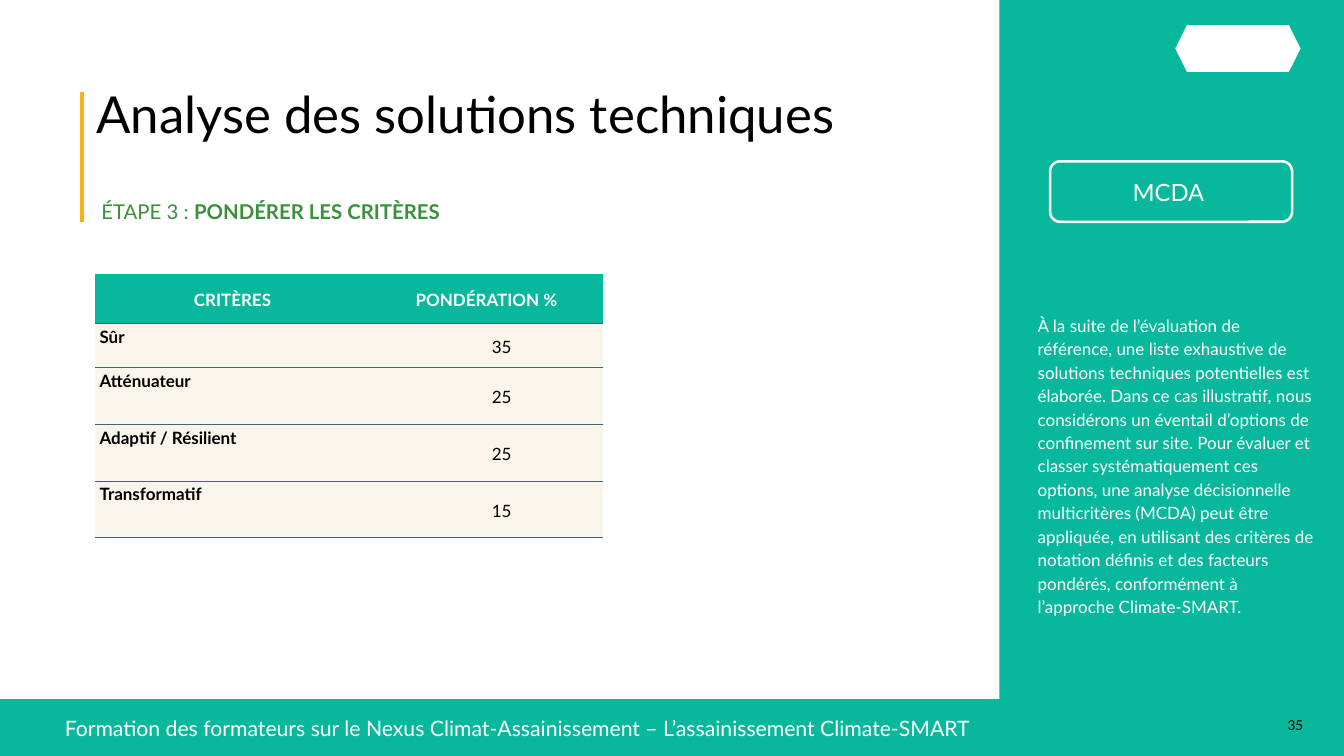
from lxml import etree
from pptx import Presentation
from pptx import util as u
from pptx.dml.color import RGBColor
from pptx.enum import shapes, text
from pptx.oxml.ns import qn

TEAL = RGBColor(0x08, 0xB8, 0x9D)
WHITE = RGBColor(0xFF, 0xFF, 0xFF)
BLACK = RGBColor(0, 0, 0)
AMBER = RGBColor(0xF6, 0xB1, 0x1A)
GREEN = RGBColor(0x3B, 0x8F, 0x3D)
CREAM = RGBColor(0xF9, 0xF5, 0xEB)
SLATE = RGBColor(0x3D, 0x68, 0x75)

WIDTH, HEIGHT = u.Inches(21.99), u.Inches(12.37)
COLUMN, ROW = WIDTH / 100, HEIGHT / 100

LEFT, CENTER, RIGHT, JUSTIFY = (text.PP_ALIGN.LEFT, text.PP_ALIGN.CENTER,
                                text.PP_ALIGN.RIGHT, text.PP_ALIGN.JUSTIFY)
LOOSE = dict(leading=1.15, after=6)
CELL = dict(leading=1.15, before=3, after=3)

SIDEBAR = (
    "À la suite de l’évaluation de référence, une liste exhaustive de solutions techniques "
    "potentielles est élaborée. Dans ce cas illustratif, nous considérons un éventail "
    "d’options de confinement sur site. Pour évaluer et classer systématiquement ces options, "
    "une analyse décisionnelle multicritères (MCDA) peut être appliquée, en utilisant des "
    "critères de notation définis et des facteurs pondérés, conformément à l’approche "
    "Climate-SMART."
)
PANELS = [
    ("RECTANGLE", (74.35, 0, 25.65, 100), TEAL),
    ("HEXAGON", (87.45, 3.31, 9.32, 6.22), WHITE),
    ("RECTANGLE", (0, 92.48, 100, 7.52), TEAL),
]
TEXTS = [
    ((6.73, 10.59, 62.53, 8.97), [("Analyse des solutions techniques", False)],
     60, BLACK, "Lato", LEFT, {}),
    ((76.76, 40.91, 21.78, 41.23), [(SIDEBAR, False)], 20, WHITE, "Lato", LEFT, LOOSE),
    ((7.09, 25.46, 44.47, 4.2), [("ÉTAPE 3 : ", False), ("PONDÉRER LES CRITÈRES", True)],
     24, GREEN, "Lato", JUSTIFY, LOOSE),
    ((4.37, 94.26, 86.58, 4.2),
     [("Formation des formateurs sur le Nexus Climat-Assainissement – "
       "L’assainissement Climate-SMART", False)], 25, WHITE, "Lato", LEFT, {}),
    ((74.4, 94.18, 23.01, 2.43), [("35", False)], 18, BLACK, "Calibri", RIGHT, {}),
]
BADGE = ("MCDA ", (78.13, 21.34, 18.01, 8))
TITLE_RULE = (6.09, 12.21, 6.09, 29.35)
TABLE_AT = (7.09, 36.3)
TABLE_COLUMNS = [20.42, 17.37]
TABLE_ROWS = [6.47, 5.82, 7.52, 7.52, 7.52]
CRITERIA = [
    ("CRITÈRES", "PONDÉRATION %"),
    ("Sûr ", "35"),
    ("Atténuateur", "25"),
    ("Adaptif / Résilient", "25"),
    ("Transformatif", "15"),
]


def place(*lengths):
    """Turn alternating column and row counts into slide lengths."""
    return [round(n * (ROW if i % 2 else COLUMN)) for i, n in enumerate(lengths)]


def write(frame, spans, size, color, font, align, leading=None, before=0, after=0):
    """Fill the first paragraph of a frame with styled runs."""
    para = frame.paragraphs[0]
    para.alignment = align
    para.line_spacing = leading
    para.space_before, para.space_after = u.Pt(before), u.Pt(after)
    for words, bold in spans:
        span = para.add_run()
        span.text = words
        span.font.size, span.font.name, span.font.bold = u.Pt(size), font, bold
        span.font.color.rgb = color
    return para


def add_panel(page, kind, area, color):
    """Add a flat filled shape without an outline."""
    panel = page.shapes.add_shape(shapes.MSO_SHAPE[kind], *place(*area))
    panel.shadow.inherit = False
    panel.fill.solid()
    panel.fill.fore_color.rgb = color
    panel.line.fill.background()
    return panel


def border_cell(cell, lined):
    """Draw the named sides of a cell and clear the others."""
    properties = cell._tc.get_or_add_tcPr()
    for place_in_order, side in enumerate(("lnL", "lnR", "lnT", "lnB")):
        edge = etree.Element(qn("a:" + side), w=str(u.Pt(1)))
        if side in lined:
            fill = etree.SubElement(edge, qn("a:solidFill"))
            etree.SubElement(fill, qn("a:srgbClr"), val=str(SLATE))
        else:
            etree.SubElement(edge, qn("a:noFill"))
        properties.insert(place_in_order, edge)


def add_criteria(page):
    """Add the table of weighted criteria."""
    area = place(*TABLE_AT, sum(TABLE_COLUMNS), sum(TABLE_ROWS))
    table = page.shapes.add_table(len(TABLE_ROWS), len(TABLE_COLUMNS), *area).table
    table.horz_banding = False
    for column, share in zip(table.columns, TABLE_COLUMNS):
        column.width = round(share * COLUMN)
    for r, (share, values) in enumerate(zip(TABLE_ROWS, CRITERIA)):
        table.rows[r].height = round(share * ROW)
        for c, value in enumerate(values):
            cell = table.cell(r, c)
            header, name = r == 0, r > 0 and c == 0
            cell.margin_left = cell.margin_right = u.Inches(0.07)
            cell.margin_top = cell.margin_bottom = 0
            cell.vertical_anchor = text.MSO_ANCHOR.TOP if name else text.MSO_ANCHOR.MIDDLE
            cell.fill.solid()
            cell.fill.fore_color.rgb = TEAL if header else CREAM
            para = write(cell.text_frame, [(value, header or name)], 20,
                         WHITE if header else BLACK, "Lato",
                         JUSTIFY if name else CENTER, **(LOOSE if name else CELL))
            if not header and not name:
                para.level = 1
                para._p.get_or_add_pPr().set("marL", str(u.Inches(0.5)))
            border_cell(cell, ("lnB",) if header else ("lnT", "lnB"))


def main():
    """Build the slide and save it."""
    deck = Presentation()
    deck.slide_width, deck.slide_height = WIDTH, HEIGHT
    page = deck.slides.add_slide(deck.slide_layouts[6])
    for panel in PANELS:
        add_panel(page, *panel)

    rule = page.shapes.add_connector(shapes.MSO_CONNECTOR.STRAIGHT, *place(*TITLE_RULE))
    rule.line.color.rgb, rule.line.width = AMBER, u.Pt(4.95)
    etree.SubElement(rule._element.spPr, qn("a:effectLst"))

    add_criteria(page)

    label, area = BADGE
    badge = add_panel(page, "ROUNDED_RECTANGLE", area, TEAL)
    badge.line.color.rgb, badge.line.width = WHITE, u.Pt(3)
    badge.text_frame.vertical_anchor = text.MSO_ANCHOR.MIDDLE
    write(badge.text_frame, [(label, False)], 28, WHITE, "Lato", CENTER)

    for area, *style, spacing in TEXTS:
        box = page.shapes.add_textbox(*place(*area))
        box.text_frame.word_wrap = True
        write(box.text_frame, *style, **spacing)
    deck.save("out.pptx")


if __name__ == "__main__":
    main()
